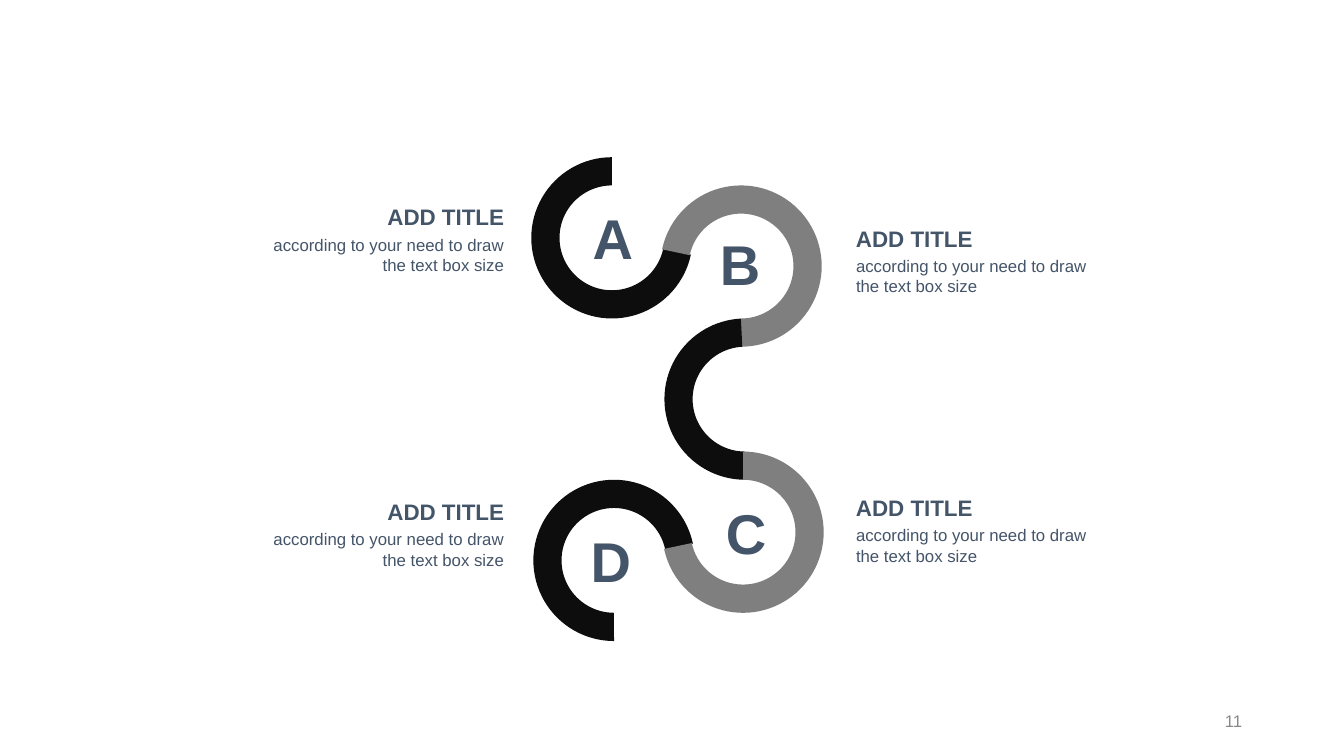
from dataclasses import dataclass

from pptx import Presentation
from pptx.dml.color import RGBColor
from pptx.enum.shapes import MSO_SHAPE
from pptx.enum.text import MSO_ANCHOR, MSO_AUTO_SIZE, PP_ALIGN
from pptx.util import Inches, Pt


@dataclass(frozen=True)
class Theme:
    font: str = "Arial"
    dark: str = "0D0D0D"
    gray: str = "7F7F7F"
    text: str = "445469"
    muted: str = "898989"
    letter: int = 40
    title: int = 16
    body: int = 12


theme = Theme()
prs = Presentation()
prs.slide_width, prs.slide_height = Inches(13.33), Inches(7.5)
s = prs.slides.add_slide(prs.slide_layouts[6])


def add_text(text, box, size, color=theme.text, bold=False, align=PP_ALIGN.LEFT):
    sp = s.shapes.add_textbox(*map(Inches, box))
    tf = sp.text_frame
    tf.word_wrap = True
    p = tf.paragraphs[0]
    p.alignment = align
    r = p.add_run()
    r.text = text
    r.font.name, r.font.size, r.font.bold = theme.font, Pt(size), bold
    r.font.color.rgb = RGBColor.from_string(color)
    return tf


# Slide number
number = add_text("11", (9.42, 6.95, 3, 0.4), theme.body, theme.muted, align=PP_ALIGN.RIGHT)
number.vertical_anchor = MSO_ANCHOR.MIDDLE

# Winding band: centre x, centre y, clockwise start and end angle, colour
DIAMETER, THICKNESS = 1.6, 0.28
arcs = [
    (6.07, 2.36, 12, 270, theme.dark),
    (7.35, 2.64, 192, 90, theme.gray),
    (7.39, 3.96, 90, 267, theme.dark),
    (6.09, 5.56, 90, 348, theme.dark),
    (7.37, 5.28, 270, 168, theme.gray),
]
for x, y, start, end, color in arcs:
    arc = s.shapes.add_shape(
        MSO_SHAPE.BLOCK_ARC, Inches(x - DIAMETER / 2), Inches(y - DIAMETER / 2),
        Inches(DIAMETER), Inches(DIAMETER))
    # Adjustments count 100000ths, angles 60000ths of a degree
    arc.adjustments[0] = start * 0.6
    arc.adjustments[1] = end * 0.6
    arc.adjustments[2] = THICKNESS / DIAMETER
    arc.fill.solid()
    arc.fill.fore_color.rgb = RGBColor.from_string(color)
    arc.line.fill.background()
    arc.shadow.inherit = False

# Letters inside the bends
for letter, x, y in [("A", 5.78, 1.97), ("D", 5.76, 5.17), ("B", 7.04, 2.23), ("C", 7.1, 4.9)]:
    tf = add_text(letter, (x, y, 0.62, 0.77), theme.letter, bold=True)
    tf.word_wrap = False
    tf.auto_size = MSO_AUTO_SIZE.SHAPE_TO_FIT_TEXT

# Captions: right-hand ones start at one edge, left-hand ones end at the other
LEFT_EDGE, RIGHT_EDGE, BODY_DROP = 5, 8.49, 0.31
lines = [
    ("ADD TITLE", 0, 2.14, 0.27, theme.title, True),
    ("according to your need to draw the text box size", BODY_DROP, 2.55, 0.4, theme.body, False),
]
for on_right, top in [(True, 2.23), (True, 4.9), (False, 2.02), (False, 4.94)]:
    for text, drop, width, height, size, bold in lines:
        left = RIGHT_EDGE if on_right else LEFT_EDGE - width
        align = PP_ALIGN.LEFT if on_right else PP_ALIGN.RIGHT
        tf = add_text(text, (left, top + drop, width, height), size, bold=bold, align=align)
        tf.margin_left = tf.margin_top = tf.margin_right = tf.margin_bottom = 0
        tf.auto_size = MSO_AUTO_SIZE.SHAPE_TO_FIT_TEXT

prs.save("out.pptx")
